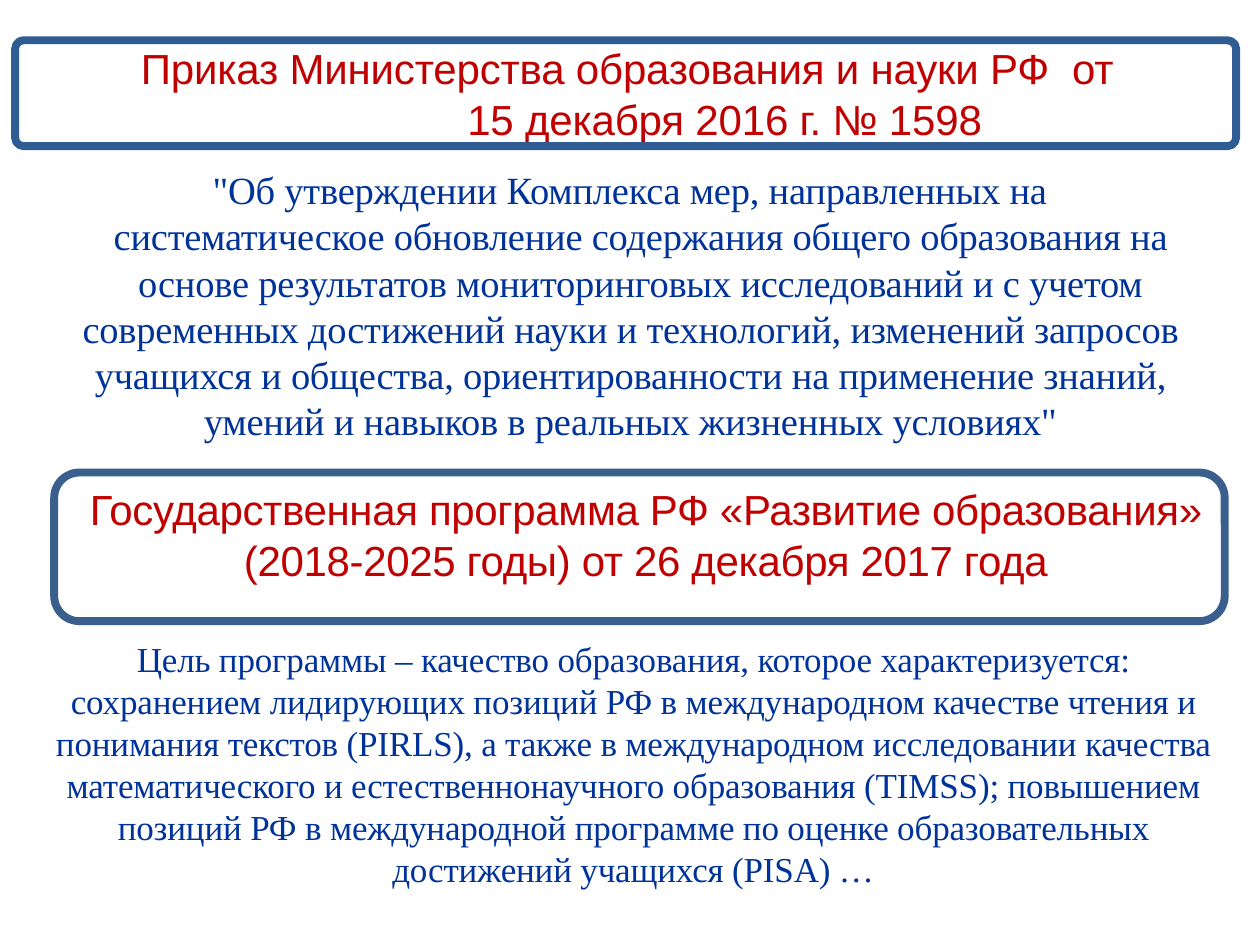
"""Build a slide on two education policy documents and their goals."""
from pptx import Presentation
from pptx.dml.color import RGBColor
from pptx.enum.shapes import MSO_SHAPE
from pptx.enum.text import MSO_ANCHOR, MSO_AUTO_SIZE, PP_ALIGN
from pptx.util import Inches, Pt

ROUNDED = MSO_SHAPE.ROUNDED_RECTANGLE
CENTER = PP_ALIGN.CENTER
TOP, MIDDLE = MSO_ANCHOR.TOP, MSO_ANCHOR.MIDDLE
NO_AUTOFIT = MSO_AUTO_SIZE.NONE

RED = RGBColor(0xC0, 0x00, 0x00)
NAVY = RGBColor(0x00, 0x33, 0x99)
ORDER_BLUE = RGBColor(0x2F, 0x5C, 0x93)
PROGRAM_BLUE = RGBColor(0x3A, 0x5F, 0x8C)

HEADING = {"font": "Arial", "size": 24, "color": RED}
BODY = {"font": "Times New Roman", "color": NAVY}
FLUSH = (0, 0.01, 0, 0)
PADDED = (0.1, 0.05, 0.1, 0.05)

ORDER_TITLE = ["Приказ Министерства образования и науки РФ  от 15 декабря 2016 г. № 1598"]
ORDER_SUBJECT = [
    "\"Об утверждении Комплекса мер, направленных на",
    "систематическое обновление содержания общего образования на основе "
    "результатов мониторинговых исследований и с учетом",
    "современных достижений науки и технологий, изменений запросов учащихся "
    "и общества, ориентированности на применение знаний, умений и навыков "
    "в реальных жизненных условиях\"",
]
PROGRAM_TITLE = [
    "Государственная программа РФ «Развитие образования» (2018-2025 годы) "
    "от 26 декабря 2017 года"
]
PROGRAM_GOAL = [
    "Цель программы – качество образования, которое характеризуется: "
    "сохранением лидирующих позиций РФ в международном качестве чтения и "
    "понимания текстов (PIRLS), а также в международном исследовании качества "
    "математического и естественнонаучного образования (TIMSS); повышением "
    "позиций РФ в международной программе по оценке образовательных "
    "достижений учащихся (PISA) …"
]

FRAMES = [
    ((0.12, 0.32, 9.69, 0.84), 0.08, ORDER_BLUE),
    ((0.43, 3.75, 9.29, 1.18), 0.17, PROGRAM_BLUE),
]


def write(box, paragraphs, *, font, size, color, insets=FLUSH, anchor=TOP,
          margins=(0,), hanging=0, spacing=-0.1, before=0.9):
    """Fill a box with centred paragraphs, each with its own left margin."""
    frame = box.text_frame
    frame.word_wrap = True
    frame.auto_size = NO_AUTOFIT
    frame.vertical_anchor = anchor
    (frame.margin_left, frame.margin_top,
     frame.margin_right, frame.margin_bottom) = map(Inches, insets)
    for index, (text, margin) in enumerate(zip(paragraphs, margins)):
        paragraph = frame.add_paragraph() if index else frame.paragraphs[0]
        paragraph.alignment = CENTER
        paragraph.space_before = Pt(0 if index else before)
        properties = paragraph._p.get_or_add_pPr()
        properties.set("marL", str(Inches(margin)))
        properties.set("indent", str(Inches(hanging)))
        run = paragraph.add_run()
        run.text = text
        run.font.name = font
        run.font.size = Pt(size)
        run.font.color.rgb = color
        run._r.get_or_add_rPr().set("spc", str(round(spacing * 100)))


def main():
    deck = Presentation()
    deck.slide_width, deck.slide_height = Inches(10), Inches(7.5)
    slide = deck.slides.add_slide(deck.slide_layouts[5])
    shapes = slide.shapes

    for place, rounding, color in FRAMES:
        border = shapes.add_shape(ROUNDED, *map(Inches, place))
        border.adjustments[0] = rounding
        border.shadow.inherit = False
        border.fill.background()
        border.line.color.rgb = color
        border.line.width = Pt(4.5)

    order = shapes.title
    order.left, order.top, order.width, order.height = map(
        Inches, (1.05, 0.32, 7.83, 0.83))
    write(order, ORDER_TITLE, **HEADING, anchor=MIDDLE, margins=(1.57,),
          hanging=-1.55, before=1)

    subject = shapes.add_textbox(*map(Inches, (0.35, 1.31, 9.3, 2.23)))
    write(subject, ORDER_SUBJECT, **BODY, size=22, margins=(0, 0.17, 0.01))

    program = shapes.add_textbox(*map(Inches, (0.52, 3.83, 9.2, 1.23)))
    write(program, PROGRAM_TITLE, **HEADING, margins=(0.01,), spacing=-0.2)

    goal = shapes.add_textbox(*map(Inches, (0.28, 5.01, 9.49, 2.46)))
    write(goal, PROGRAM_GOAL, **BODY, size=20, insets=PADDED, before=0)

    deck.save("out.pptx")


if __name__ == "__main__":
    main()
